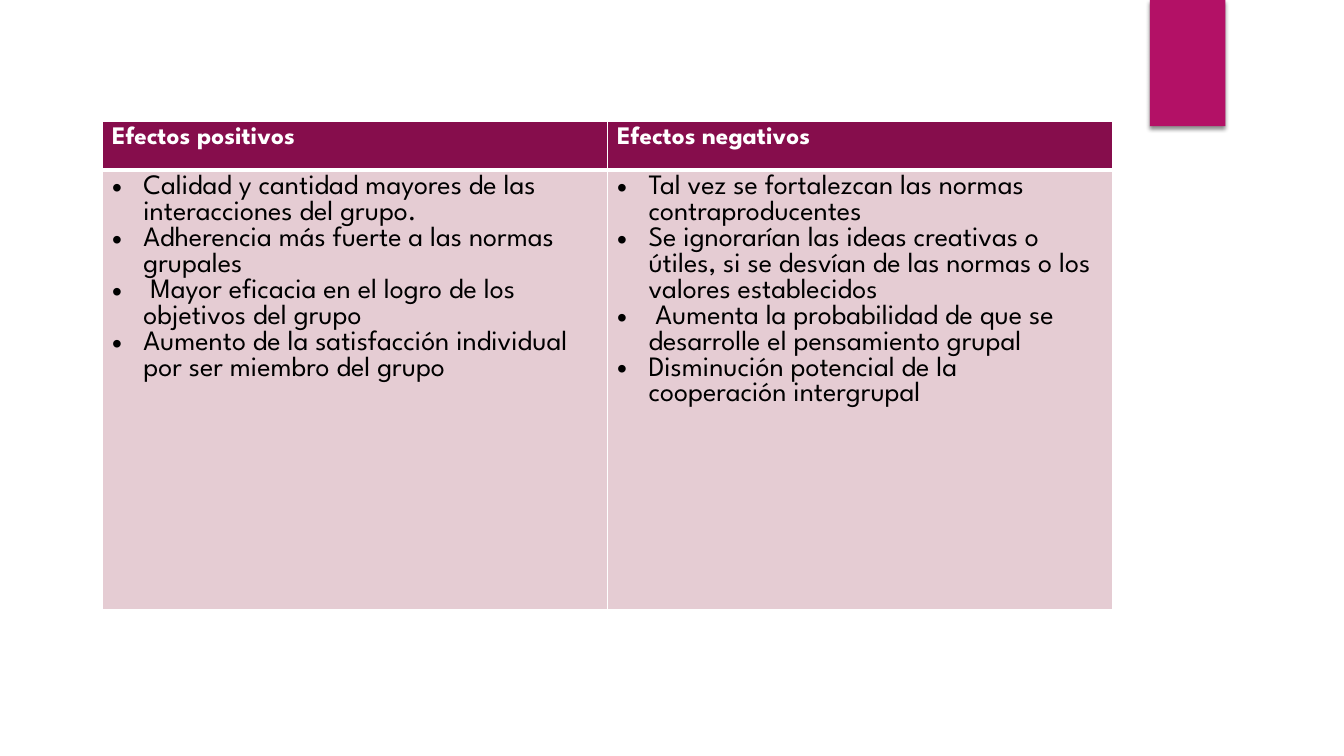
"""Build a slide comparing the positive and negative effects of group cohesion."""
from dataclasses import dataclass

from lxml.etree import SubElement
from pptx import Presentation
from pptx.dml.color import RGBColor
from pptx.enum.shapes import MSO_SHAPE
from pptx.oxml.ns import qn
from pptx.util import Cm, Pt

EFFECTS = {
    "Efectos positivos": [
        "Calidad y cantidad mayores de las interacciones del grupo.",
        "Adherencia más fuerte a las normas grupales",
        " Mayor eficacia en el logro de los objetivos del grupo",
        "Aumento de la satisfacción individual por ser miembro del grupo",
    ],
    "Efectos negativos": [
        "Tal vez se fortalezcan las normas contraproducentes",
        "Se ignorarían las ideas creativas o útiles, si se desvían de las normas "
        "o los valores establecidos",
        " Aumenta la probabilidad de que se desarrolle el pensamiento grupal",
        "Disminución potencial de la cooperación intergrupal",
    ],
}


@dataclass(frozen=True)
class Theme:
    """Colours, font and type sizes."""
    font: str = "League Spartan"
    heading_size: int = 18
    effect_size: int = 20
    accent: str = "B31166"
    heading_fill: str = "860D4C"
    effect_fill: str = "E5CCD3"
    light: str = "FFFFFF"
    dark: str = "000000"


THEME = Theme()
TABLE_LEFT, TABLE_TOP = Cm(2.57), Cm(3.07)
COLUMN_WIDTH = Cm(12.73)
ROW_HEIGHTS = (Cm(1.22), Cm(11.07))
BULLET_INDENT = Cm(0.79)
THIN, THICK = Pt(1), Pt(3)


def add_solid_color(parent, color):
    fill = SubElement(parent, qn("a:solidFill"))
    return SubElement(fill, qn("a:srgbClr"), val=color)


def add_accent_tab(slide):
    tab = slide.shapes.add_shape(MSO_SHAPE.RECTANGLE, Cm(28.98), 0, Cm(1.9), Cm(3.18))
    tab.fill.solid()
    tab.fill.fore_color.rgb = RGBColor.from_string(THEME.accent)
    tab.line.fill.background()
    tab.shadow.inherit = False
    effects = tab._element.spPr.find(qn("a:effectLst"))
    shadow = SubElement(effects, qn("a:outerShdw"), blurRad=str(Pt(3)), dist=str(Pt(2)),
                        dir="5400000", algn="ctr", rotWithShape="0")
    color = SubElement(shadow, qn("a:srgbClr"), val=THEME.dark)
    SubElement(color, qn("a:alpha"), val="45000")


def style_cell(cell, fill, top, bottom):
    borders = {"a:lnL": THIN, "a:lnR": THIN, "a:lnT": top, "a:lnB": bottom}
    properties = cell._tc.get_or_add_tcPr()
    for side, width in borders.items():
        add_solid_color(SubElement(properties, qn(side), w=str(width)), THEME.light)
    cell.fill.solid()
    cell.fill.fore_color.rgb = RGBColor.from_string(fill)


def add_bullet(paragraph):
    properties = paragraph._p.get_or_add_pPr()
    properties.set("marL", str(BULLET_INDENT))
    properties.set("indent", str(-BULLET_INDENT))
    SubElement(properties, qn("a:buFont"), typeface="Arial")
    SubElement(properties, qn("a:buChar"), char="•")


def add_text(paragraph, text, size, color, bold):
    run = paragraph.add_run()
    run.text = text
    run.font.name = THEME.font
    run.font.size = Pt(size)
    run.font.bold = bold
    run.font.color.rgb = RGBColor.from_string(color)


def add_effects_table(slide):
    table = slide.shapes.add_table(len(ROW_HEIGHTS), len(EFFECTS), TABLE_LEFT, TABLE_TOP,
                                   COLUMN_WIDTH * len(EFFECTS), sum(ROW_HEIGHTS)).table
    table.horz_banding = False
    for row, height in zip(table.rows, ROW_HEIGHTS):
        row.height = height
    for index, (heading, effects) in enumerate(EFFECTS.items()):
        table.columns[index].width = COLUMN_WIDTH
        heading_cell, effects_cell = table.cell(0, index), table.cell(1, index)
        style_cell(heading_cell, THEME.heading_fill, THIN, THICK)
        style_cell(effects_cell, THEME.effect_fill, THICK, THIN)
        add_text(heading_cell.text_frame.paragraphs[0], heading,
                 THEME.heading_size, THEME.light, True)
        frame = effects_cell.text_frame
        for position, effect in enumerate(effects):
            paragraph = frame.add_paragraph() if position else frame.paragraphs[0]
            add_bullet(paragraph)
            add_text(paragraph, effect, THEME.effect_size, THEME.dark, False)


def main():
    presentation = Presentation()
    presentation.slide_width, presentation.slide_height = Cm(33.87), Cm(19.05)
    slide = presentation.slides.add_slide(presentation.slide_layouts[6])
    slide.background.fill.solid()
    slide.background.fill.fore_color.rgb = RGBColor.from_string(THEME.light)
    add_accent_tab(slide)
    add_effects_table(slide)
    presentation.save("out.pptx")


if __name__ == "__main__":
    main()
